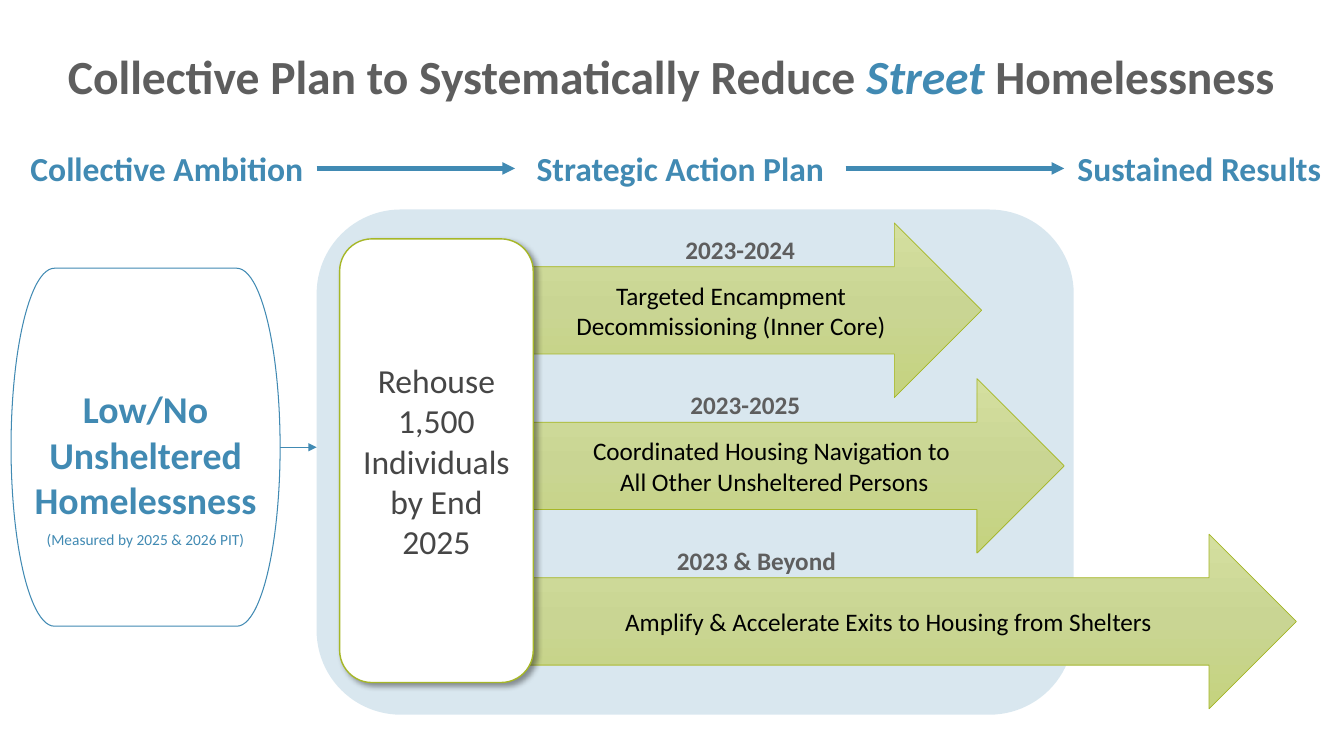
from lxml import etree
from pptx import Presentation
from pptx.dml.color import RGBColor
from pptx.enum import shapes, text
from pptx.oxml import parse_xml
from pptx.oxml.ns import nsdecls, qn
from pptx.util import Cm, Pt

BLUE = RGBColor(0x41, 0x8A, 0xB3)
GREEN = RGBColor(0xA6, 0xB7, 0x27)
GREY = RGBColor(0x5E, 0x5E, 0x5E)
DARK = RGBColor(0x46, 0x46, 0x46)
BLACK = RGBColor(0, 0, 0)
WHITE = RGBColor(0xFF, 0xFF, 0xFF)
GREEN_STOPS = ((0, "D4DF9F"), (50, "C9D593"), (100, "C5D37E"))
SHAPE = shapes.MSO_SHAPE
CENTER = text.PP_ALIGN.CENTER
LEFT = text.PP_ALIGN.LEFT


def add_span(para, words, size, color, bold=False, italic=False):
    span = para.add_run()
    span.text = words
    font = span.font
    font.name = "Calibri"
    font.size = Pt(size)
    font.color.rgb = color
    font.bold = bold
    font.italic = italic


def write_lines(box, lines, size, color, bold=False, align=CENTER):
    """Fill a shape with one paragraph per line and return the paragraphs."""
    frame = box.text_frame
    frame.word_wrap = True
    for line in lines[1:]:
        frame.add_paragraph()
    for para, line in zip(frame.paragraphs, lines):
        para.alignment = align
        add_span(para, line, size, color, bold)
    return frame.paragraphs


def add_label(page, words, left, top, width, height, size, color, align=CENTER):
    box = page.shapes.add_textbox(Cm(left), Cm(top), Cm(width), Cm(height))
    write_lines(box, [words], size, color, True, align)
    return box


def add_block(page, kind, left, top, width, height, fill=None, line=None, weight=1):
    block = page.shapes.add_shape(kind, Cm(left), Cm(top), Cm(width), Cm(height))
    block.shadow.inherit = False
    block.text_frame.vertical_anchor = text.MSO_ANCHOR.MIDDLE
    if fill is None:
        block.fill.background()
    else:
        block.fill.solid()
        block.fill.fore_color.rgb = fill
    if line is None:
        block.line.fill.background()
    else:
        block.line.color.rgb = line
        block.line.width = Pt(weight)
    return block


def fade(block, percent):
    color = block.fill._xPr.find(qn("a:solidFill"))[0]
    etree.SubElement(color, qn("a:alpha")).set("val", str(percent * 1000))


def shade_green(block):
    stops = "".join(
        f'<a:gs pos="{place * 1000}"><a:srgbClr val="{color}"/></a:gs>'
        for place, color in GREEN_STOPS)
    properties = block._element.spPr
    properties.replace(properties.find(qn("a:noFill")), parse_xml(
        f'<a:gradFill {nsdecls("a")}><a:gsLst>{stops}</a:gsLst>'
        '<a:lin ang="5400000" scaled="0"/></a:gradFill>'))


def cast_shadow(block):
    effects = block._element.spPr.find(qn("a:effectLst"))
    effects.append(parse_xml(
        f'<a:outerShdw {nsdecls("a")} blurRad="{Pt(4)}" dist="{Pt(3)}" dir="2700000" '
        'algn="tl" rotWithShape="0"><a:srgbClr val="000000"><a:alpha val="40000"/>'
        '</a:srgbClr></a:outerShdw>'))


def add_arrow_line(page, source, end_x, end_y, weight, target=None):
    """Draw an arrow from the right side of source to a point or to target's left side."""
    arrow = page.shapes.add_connector(
        shapes.MSO_CONNECTOR.STRAIGHT, source.left + source.width,
        source.top + source.height // 2, end_x, end_y)
    arrow.begin_connect(source, 3)
    if target is not None:
        arrow.end_connect(target, 1)
    arrow.line.color.rgb = BLUE
    arrow.line.width = Pt(weight)
    etree.SubElement(arrow.line._get_or_add_ln(), qn("a:tailEnd")).set("type", "triangle")
    etree.SubElement(arrow._element.spPr, qn("a:effectLst"))


def add_title(page):
    title = page.shapes.title
    title.left, title.top, title.width, title.height = Cm(-0.38), Cm(0.15), Cm(34.59), Cm(3.68)
    title.text_frame.vertical_anchor = text.MSO_ANCHOR.MIDDLE
    para = title.text_frame.paragraphs[0]
    para.alignment = CENTER
    para.line_spacing = 0.9
    add_span(para, "Collective Plan to Systematically Reduce ", 34, GREY, True)
    add_span(para, "Street", 34, BLUE, True, True)
    add_span(para, " Homelessness", 34, GREY, True)


def add_headings(page):
    headings = [
        add_label(page, words, left, 3.61, width, 1.27, 24, BLUE)
        for words, left, width in (
            ("Collective Ambition", 0.43, 7.55),
            ("Strategic Action Plan", 12.98, 8.33),
            ("Sustained Results", 26.82, 6.81))]
    for source, target in zip(headings, headings[1:]):
        add_arrow_line(page, source, target.left, target.top + target.height // 2, 3, target)


def add_ambition(page):
    goal = add_block(page, SHAPE.FLOWCHART_TERMINATOR, 0.28, 6.76, 6.78, 9.02,
                     line=BLUE, weight=0.75)
    goal.text_frame.margin_top = Cm(1.15)
    write_lines(goal, ["Low/No Unsheltered Homelessness"], 27, BLUE, True)
    measure = goal.text_frame.add_paragraph()
    measure.alignment = CENTER
    measure.space_before = Pt(6)
    measure.space_after = Pt(2)
    add_span(measure, "(Measured by 2025 & 2026 PIT)", 11, BLUE)
    return goal


def add_phases(page):
    phases = (
        (13.21, 11.53, ["Targeted Encampment Decommissioning (Inner Core)"],
         "2023-2024", 17.02, 3.45),
        (13.31, 13.51, ["Coordinated Housing Navigation to ", "All Other Unsheltered Persons"],
         "2023-2025", 17.15, 3.45),
        (13.21, 19.46, ["Amplify & Accelerate Exits to Housing from Shelters"],
         "2023 & Beyond", 16.81, 4.9))
    for row, (left, width, lines, years, years_left, years_width) in enumerate(phases):
        top = 5.62 + row * 3.92
        arrow = add_block(page, SHAPE.RIGHT_ARROW, left, top, width, 4.4, line=GREEN, weight=0.5)
        shade_green(arrow)
        write_lines(arrow, lines, 18, BLACK)
        add_label(page, years, years_left, top + 0.15, years_width, 1.02, 18, GREY, LEFT)


def main():
    deck = Presentation()
    deck.slide_width, deck.slide_height = Cm(33.87), Cm(19.05)
    page = deck.slides.add_slide(deck.slide_layouts[5])
    add_title(page)
    add_headings(page)
    goal = add_ambition(page)
    panel = add_block(page, SHAPE.ROUNDED_RECTANGLE, 7.98, 5.28, 19.08, 12.73, fill=BLUE)
    fade(panel, 20)
    add_phases(page)
    target = add_block(page, SHAPE.ROUNDED_RECTANGLE, 8.56, 6.02, 4.88, 11.18, WHITE, GREEN)
    cast_shadow(target)
    write_lines(target, ["Rehouse 1,500 Individuals by End 2025"], 24, DARK)
    add_arrow_line(page, goal, panel.left, goal.top + goal.height // 2, 0.5)
    deck.save("out.pptx")


if __name__ == "__main__":
    main()
